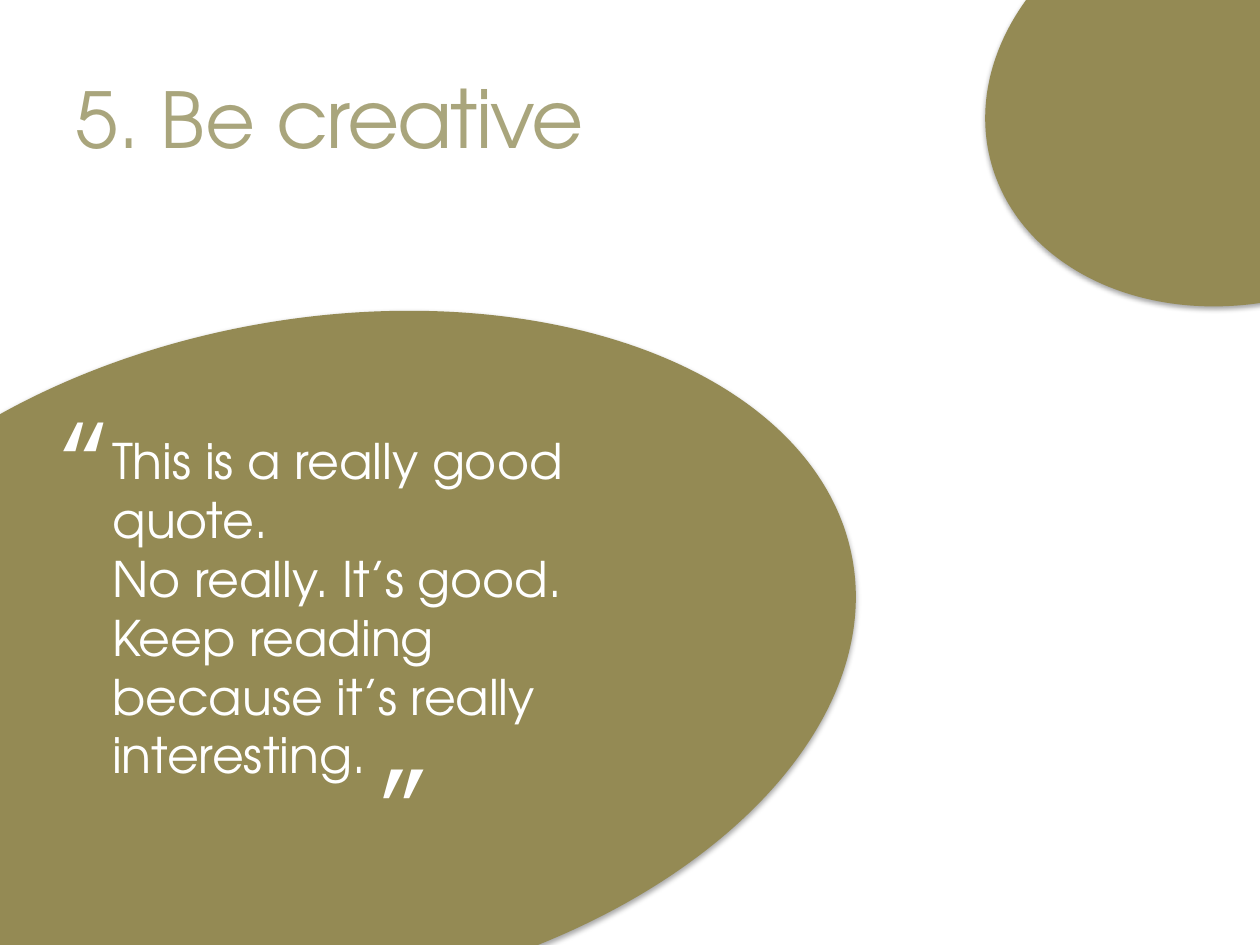
from lxml import etree
from pptx import Presentation
from pptx.dml.color import RGBColor
from pptx.enum import shapes, text
from pptx.oxml import parse_xml
from pptx.oxml.ns import nsdecls
from pptx.util import Cm, Pt

FONT = "TeX Gyre Adventor"
OLIVE, WHITE = "948A54", "FFFFFF"


def rgb(value):
    return RGBColor.from_string(value)


def add_run(p, content, size=28, font=FONT, color=WHITE, spacing=None):
    r = p.add_run()
    r.text = content
    r.font.size = Pt(size)
    r.font.name = font
    r.font.color.rgb = rgb(color)
    if spacing is not None:
        r.font._element.set("spc", str(spacing))


prs = Presentation()
prs.slide_width, prs.slide_height = Cm(25.4), Cm(19.05)
s = prs.slides.add_slide(prs.slide_layouts[5])

# Ellipses running off the slide edges, with a soft shadow below
shadow = f"""<a:effectLst {nsdecls('a')}>
  <a:outerShdw blurRad="39400" dist="22900" dir="5400000" rotWithShape="0">
    <a:srgbClr val="000000"><a:alpha val="35000"/></a:srgbClr>
  </a:outerShdw>
</a:effectLst>"""
ellipses = [
    (-4.78, 6.45, 22.15, 13.67, -10.6),
    (19.79, -2.34, 10.59, 8.43, -15.6),
]
for left, top, width, height, angle in ellipses:
    sp = s.shapes.add_shape(shapes.MSO_SHAPE.OVAL, Cm(left), Cm(top), Cm(width), Cm(height))
    sp.rotation = angle
    sp.fill.solid()
    sp.fill.fore_color.rgb = rgb(OLIVE)
    sp.line.fill.background()
    sp._element.spPr.append(parse_xml(shadow))

# Title
title = s.shapes.title
title.left, title.top, title.width, title.height = Cm(1.27), Cm(0.76), Cm(22.86), Cm(3.18)
tf = title.text_frame
tf.auto_size = text.MSO_AUTO_SIZE.NONE
tf.vertical_anchor = text.MSO_ANCHOR.MIDDLE
p = tf.paragraphs[0]
p.alignment = text.PP_ALIGN.LEFT
add_run(p, "5. Be ", size=44, color="A9A57C")
add_run(p, "creative", size=46, color="A9A57C", spacing=-100)

# Quotation and its large quote marks
quote = ["This is a really good quote.",
         "No really. It’s good. Keep reading because it’s really interesting."]
mark = {"size": 54, "font": "Courier New"}
boxes = [
    (2.01, 8.56, 9.68, 8.64, quote, {}),
    (0.86, 7.87, 4.78, 2.57, ["“"], mark),
    (7.32, 14.88, 4.78, 2.57, ["”"], mark),
]
for left, top, width, height, lines, style in boxes:
    tf = s.shapes.add_textbox(Cm(left), Cm(top), Cm(width), Cm(height)).text_frame
    tf.word_wrap = True
    for i, line in enumerate(lines):
        p = tf.add_paragraph() if i else tf.paragraphs[0]
        add_run(p, line, **style)

prs.save("out.pptx")
